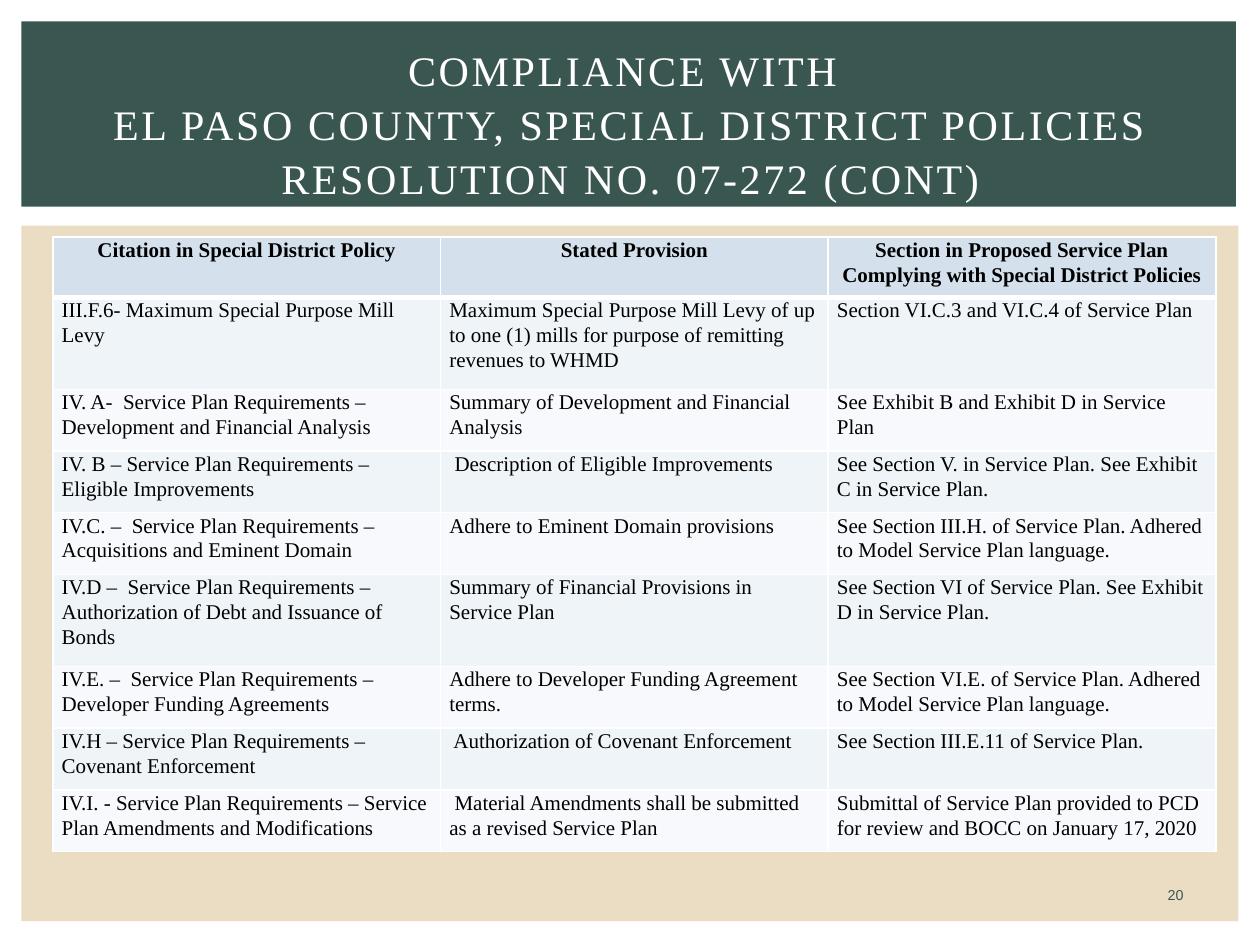
"""Build the slide on compliance with special district policies."""
from lxml import etree
from pptx import Presentation
from pptx import util as u
from pptx.dml.color import RGBColor
from pptx.enum import shapes, text
from pptx.oxml import ns

TITLE = ["COMPLIANCE WITH ", "EL PASO COUNTY, SPECIAL DISTRICT POLICIES", "RESOLUTION NO. 07-272 (CONT)"]
ROWS = [
    ("Citation in Special District Policy", "Stated Provision",
     "Section in Proposed Service Plan Complying with Special District Policies"),
    ("III.F.6- Maximum Special Purpose Mill Levy",
     "Maximum Special Purpose Mill Levy of up to one (1) mills for purpose of remitting revenues to WHMD",
     "Section VI.C.3 and VI.C.4 of Service Plan"),
    ("IV. A-  Service Plan Requirements – Development and Financial Analysis",
     "Summary of Development and Financial Analysis",
     "See Exhibit B and Exhibit D in Service Plan"),
    ("IV. B – Service Plan Requirements – Eligible Improvements",
     " Description of Eligible Improvements",
     "See Section V. in Service Plan. See Exhibit C in Service Plan."),
    ("IV.C. –  Service Plan Requirements – Acquisitions and Eminent Domain",
     "Adhere to Eminent Domain provisions",
     "See Section III.H. of Service Plan. Adhered to Model Service Plan language."),
    ("IV.D –  Service Plan Requirements – Authorization of Debt and Issuance of Bonds",
     "Summary of Financial Provisions in Service Plan",
     "See Section VI of Service Plan. See Exhibit D in Service Plan."),
    ("IV.E. –  Service Plan Requirements – Developer Funding Agreements",
     "Adhere to Developer Funding Agreement terms.",
     "See Section VI.E. of Service Plan. Adhered to Model Service Plan language."),
    ("IV.H – Service Plan Requirements – Covenant Enforcement",
     " Authorization of Covenant Enforcement",
     "See Section III.E.11 of Service Plan."),
    ("IV.I. - Service Plan Requirements – Service Plan Amendments and Modifications",
     " Material Amendments shall be submitted as a revised Service Plan",
     "Submittal of Service Plan provided to PCD for review and BOCC on January 17, 2020"),
]
TALL = {1, 5}
HUES = {"green": "395750", "sand": "EBDDC3", "head": "D4E1ED", "odd": "EFF4F8",
        "even": "F7F9FC", "white": "FFFFFF", "black": "000000"}
SERIF = "Times New Roman"


def hue(name):
    return RGBColor.from_string(HUES[name])


def panel(page, box, name):
    rect = page.shapes.add_shape(shapes.MSO_SHAPE.RECTANGLE, *map(u.Inches, box))
    rect.shadow.inherit = False
    rect.fill.solid()
    rect.fill.fore_color.rgb = hue(name)
    rect.line.fill.background()


def write(para, words, size, name, face=SERIF, bold=False):
    run = para.add_run()
    run.text = words
    run.font.size, run.font.name, run.font.bold = u.Pt(size), face, bold
    run.font.color.rgb = hue(name)
    return run


def label(page, box):
    frame = page.shapes.add_textbox(*map(u.Inches, box)).text_frame
    frame.word_wrap = True
    frame.vertical_anchor = text.MSO_ANCHOR.MIDDLE
    para = frame.paragraphs[0]
    para.alignment = text.PP_ALIGN.CENTER
    return para


def edge(cell, side, width):
    props = cell._tc.get_or_add_tcPr()
    line = etree.SubElement(props, ns.qn("a:" + side), w=str(u.Pt(width)))
    fill = etree.SubElement(line, ns.qn("a:solidFill"))
    etree.SubElement(fill, ns.qn("a:srgbClr"), val=HUES["white"])


def fill_cell(cell, words, row):
    head = row == 0
    for side in ("lnL", "lnR", "lnT", "lnB"):
        thick = (head and side == "lnB") or (row == 1 and side == "lnT")
        edge(cell, side, 3 if thick else 1)
    cell.fill.solid()
    cell.fill.fore_color.rgb = hue("head" if head else "odd" if row % 2 else "even")
    cell.margin_left = cell.margin_right = u.Inches(0.07)
    cell.margin_top = cell.margin_bottom = 0
    para = cell.text_frame.paragraphs[0]
    para.line_spacing = 1.07
    para.alignment = text.PP_ALIGN.CENTER if head else text.PP_ALIGN.LEFT
    write(para, words, 12, "black", bold=head)


def main():
    deck = Presentation()
    deck.slide_width, deck.slide_height = u.Inches(10), u.Inches(7.5)
    page = deck.slides.add_slide(deck.slide_layouts[6])
    panel(page, (0.17, 1.79, 9.66, 5.52), "sand")
    panel(page, (0.17, 0.17, 9.64, 1.47), "green")
    write(label(page, (9.01, 6.95, 0.64, 0.3)), "20", 8.2, "green", "Arial")

    box = map(u.Inches, (0.42, 1.88, 9.23, 4.88))
    grid = page.shapes.add_table(len(ROWS), len(ROWS[0]), *box).table
    for row, cells in enumerate(ROWS):
        grid.rows[row].height = u.Inches(0.73 if row in TALL else 0.49 if row else 0.48)
        for col, words in enumerate(cells):
            fill_cell(grid.cell(row, col), words, row)

    para = label(page, (0.42, 0.39, 9.17, 1.15))
    para.line_spacing = 1.07
    for num, words in enumerate(TITLE):
        if num:
            para.add_line_break()
        run = write(para, words, 24, "white")
        run.font._element.set("spc", "150")
    deck.save("out.pptx")


if __name__ == "__main__":
    main()
